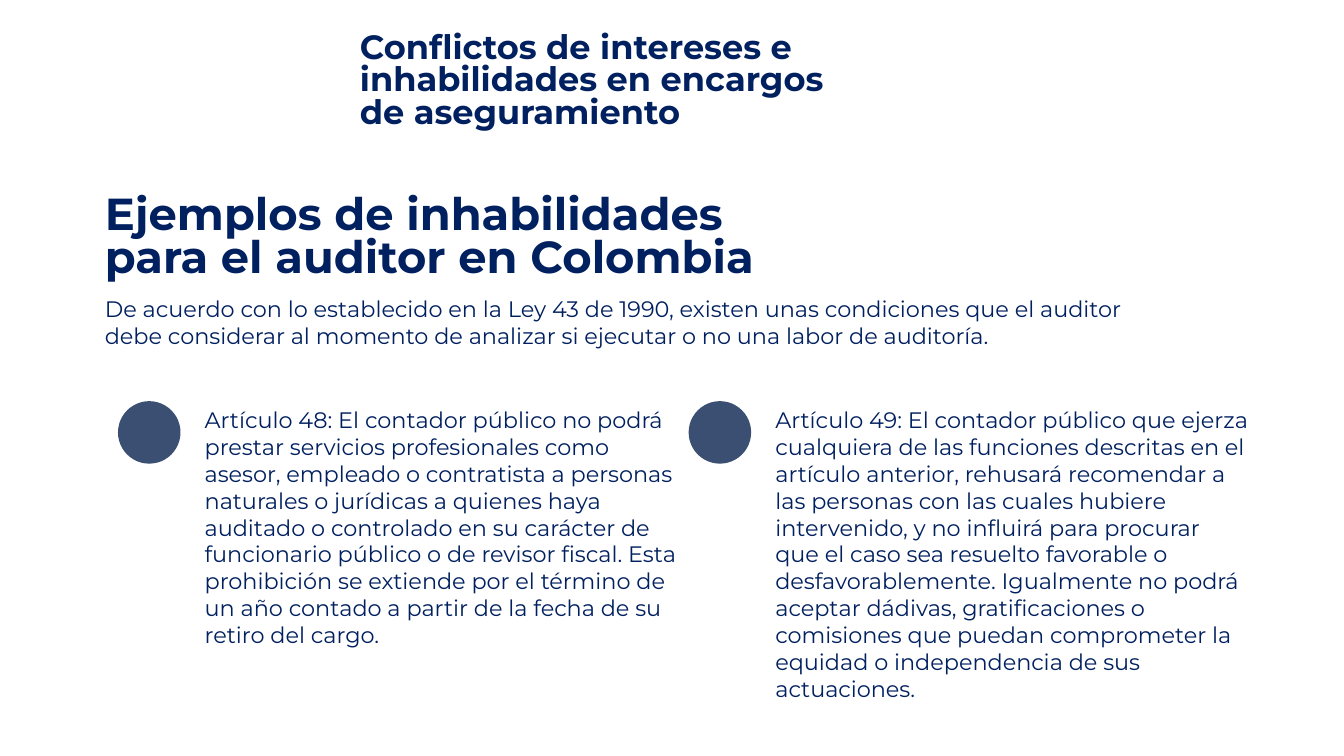
from dataclasses import dataclass

from pptx import Presentation
from pptx import util as u
from pptx.dml.color import RGBColor
from pptx.enum import shapes, text
from pptx.oxml.xmlchemy import OxmlElement

PX = 9144


@dataclass(frozen=True)
class Theme:
    font: str = "Montserrat"
    ink: str = "002060"
    marker: str = "3B4F72"
    topic: int = 24
    title: int = 32
    body: int = 16


class Deck:
    def __init__(self, theme, width, height):
        self.theme = theme
        self.prs = Presentation()
        self.prs.slide_width, self.prs.slide_height = width * PX, height * PX

    def add_slide(self, layout):
        self.s = self.prs.slides.add_slide(self.prs.slide_layouts[layout])

    def place(self, sp, box):
        sp.left, sp.top, sp.width, sp.height = (v * PX for v in box)

    def fill_text(self, idx, box, content, size, bold):
        sp = self.s.placeholders[idx]
        self.place(sp, box)
        tf = sp.text_frame
        tf.text = content
        tf.word_wrap = True
        tf.auto_size = text.MSO_AUTO_SIZE.NONE
        p = tf.paragraphs[0]
        pPr = p._p.get_or_add_pPr()
        pPr.set("marL", "0")
        pPr.set("indent", "0")
        pPr.append(OxmlElement("a:buNone"))
        p.alignment = text.PP_ALIGN.LEFT
        p.space_before = u.Pt(0)
        for r in p.runs:
            r.font.name = self.theme.font
            r.font.size = u.Pt(size)
            r.font.bold = bold
            r.font.color.rgb = RGBColor.from_string(self.theme.ink)
        return tf, p

    def heading(self, idx, box, content, size):
        tf, p = self.fill_text(idx, box, content, size, True)
        tf.vertical_anchor = text.MSO_ANCHOR.MIDDLE
        p.line_spacing = 0.8

    def body(self, idx, box, content):
        tf, p = self.fill_text(idx, box, content, self.theme.body, False)
        tf.vertical_anchor = text.MSO_ANCHOR.TOP
        p.space_after = u.Pt(15)

    def marker(self, x, y, size):
        sp = self.s.shapes.add_shape(
            shapes.MSO_SHAPE.OVAL, x * PX, y * PX, size * PX, size * PX)
        sp.shadow.inherit = False
        sp.fill.solid()
        sp.fill.fore_color.rgb = RGBColor.from_string(self.theme.marker)
        sp.line.fill.background()


ARTICLES = [
    (2, 279, "Artículo 48: El contador público no podrá prestar servicios "
     "profesionales como asesor, empleado o contratista a personas naturales "
     "o jurídicas a quienes haya auditado o controlado en su carácter de "
     "funcionario público o de revisor fiscal. Esta prohibición se extiende "
     "por el término de un año contado a partir de la fecha de su retiro del "
     "cargo."),
    (4, 306, "Artículo 49: El contador público que ejerza cualquiera de las "
     "funciones descritas en el artículo anterior, rehusará recomendar a las "
     "personas con las cuales hubiere intervenido, y no influirá para procurar "
     "que el caso sea resuelto favorable o desfavorablemente. Igualmente no "
     "podrá aceptar dádivas, gratificaciones o comisiones que puedan "
     "comprometer la equidad o independencia de sus actuaciones."),
]


def main():
    theme = Theme()
    deck = Deck(theme, 1333, 750)
    deck.add_slide(4)
    deck.heading(3, (347, 9, 515, 145),
                 "Conflictos de intereses e inhabilidades en encargos "
                 "de aseguramiento", theme.topic)
    deck.heading(0, (94, 165, 741, 145),
                 "Ejemplos de inhabilidades para el auditor en Colombia",
                 theme.title)
    deck.body(1, (94, 288, 1091, 64),
              "De acuerdo con lo establecido en la Ley 43 de 1990, existen "
              "unas condiciones que el auditor debe considerar al momento de "
              "analizar si ejecutar o no una labor de auditoría.")
    for i, (idx, height, content) in enumerate(ARTICLES):
        x = 117 + i * 566
        deck.marker(x, 398, 62)
        deck.body(idx, (x + 76, 398, 490, height), content)
    deck.prs.save("out.pptx")


if __name__ == "__main__":
    main()
